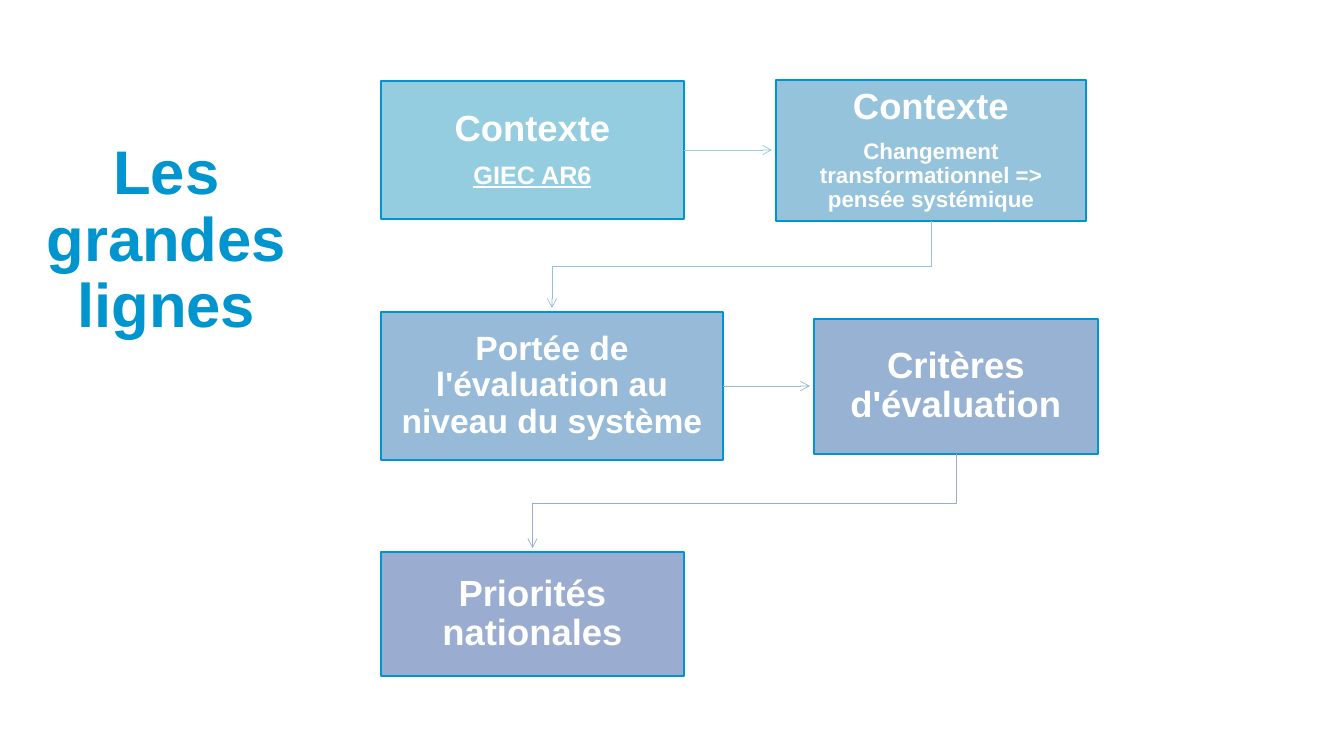
from lxml import etree
from pptx import Presentation
from pptx.dml.color import RGBColor
from pptx.enum.shapes import MSO_CONNECTOR, MSO_SHAPE
from pptx.enum.text import MSO_ANCHOR, PP_ALIGN
from pptx.oxml.ns import qn
from pptx.util import Emu, Pt

RECTANGLE = MSO_SHAPE.RECTANGLE
STRAIGHT = MSO_CONNECTOR.STRAIGHT
CENTER = PP_ALIGN.CENTER
MIDDLE, BOTTOM = MSO_ANCHOR.MIDDLE, MSO_ANCHOR.BOTTOM
RIGHT_SIDE = 3

EMU_PER_PX = 914400 / 100.8
WHITE = "FEFFFE"
BLUE = "0095CE"
ARROW_GAP = 4
STEP_INSET = 18

# Each step: left, top, width, height, fill, [(text, size, underlined)]
STEPS = [
    (381, 81, 303, 138, "93CDDF",
     [("Contexte", 26, False), ("GIEC AR6", 18, True)]),
    (776, 80, 310, 141, "95C3DB",
     [("Contexte", 26, False),
      ("Changement transformationnel => pensée systémique", 16, False)]),
    (381, 312, 342, 148, "96BAD7",
     [("Portée de l'évaluation au niveau du système", 24, False)]),
    (814, 319, 284, 135, "98B2D3",
     [("Critères d'évaluation", 26, False)]),
    (381, 552, 303, 124, "9AACCF",
     [("Priorités nationales", 26, False)]),
]
ARROW_COLORS = ["93CDDF", "95C0DA", "97B5D5", "9AACCF"]


def px(length):
    return Emu(round(length * EMU_PER_PX))


def color(value):
    return RGBColor.from_string(value)


def style_paragraph(paragraph, text, size, text_color, underlined=False):
    paragraph.text = text
    paragraph.alignment = CENTER
    paragraph.line_spacing = 0.9
    font = paragraph.font
    font.name, font.size, font.bold = "Arial", Pt(size), True
    font.color.rgb = color(text_color)
    if underlined:
        font.underline = True


def add_title(slide, text):
    title = slide.shapes.add_textbox(px(0), px(140), px(333), px(206))
    frame = title.text_frame
    frame.word_wrap = True
    frame.vertical_anchor = BOTTOM
    style_paragraph(frame.paragraphs[0], text, 44, BLUE)


def add_step(slide, left, top, width, height, fill, lines):
    step = slide.shapes.add_shape(
        RECTANGLE, px(left), px(top), px(width), px(height))
    step.shadow.inherit = False
    step.fill.solid()
    step.fill.fore_color.rgb = color(fill)
    step.line.color.rgb = color(BLUE)
    step.line.width = Pt(1)

    frame = step.text_frame
    frame.word_wrap = True
    frame.vertical_anchor = MIDDLE
    frame.margin_left = frame.margin_right = px(STEP_INSET)
    frame.margin_top = frame.margin_bottom = px(STEP_INSET)
    for index, (text, size, underlined) in enumerate(lines):
        paragraph = frame.add_paragraph() if index else frame.paragraphs[0]
        style_paragraph(paragraph, text, size, WHITE, underlined)
        if index < len(lines) - 1:
            paragraph.space_after = Pt(9)
    return step


def style_arrow(line, line_color):
    line.color.rgb = color(line_color)
    line.width = Pt(0.5)
    etree.SubElement(line._get_or_add_ln(), qn("a:tailEnd"), type="arrow")


def add_arrow_across(slide, step, following, line_color):
    """Straight arrow from a step to the one on its right."""
    middle = step.top + step.height // 2
    arrow = slide.shapes.add_connector(
        STRAIGHT, step.left + step.width, middle,
        following.left - px(ARROW_GAP), middle)
    arrow.begin_connect(step, RIGHT_SIDE)
    style_arrow(arrow.line, line_color)
    etree.SubElement(arrow._element.spPr, qn("a:effectLst"))


def add_arrow_down(slide, step, following, line_color):
    """Bent arrow from a step to the first one of the next row."""
    start_x = step.left + step.width // 2
    end_x = following.left + following.width // 2
    start_y = step.top + step.height
    bend_y = (start_y + following.top) // 2
    builder = slide.shapes.build_freeform(start_x, start_y)
    builder.add_line_segments(
        [(start_x, bend_y), (end_x, bend_y),
         (end_x, following.top - px(ARROW_GAP))], close=False)
    arrow = builder.convert_to_shape()
    arrow.shadow.inherit = False
    arrow.fill.background()
    style_arrow(arrow.line, line_color)


def main():
    deck = Presentation()
    deck.slide_width, deck.slide_height = px(1344), px(756)
    slide = deck.slides.add_slide(deck.slide_layouts[6])
    slide.background.fill.solid()
    slide.background.fill.fore_color.rgb = color(WHITE)

    add_title(slide, "Les grandes lignes")

    # Steps, two to a row
    steps = [add_step(slide, *step) for step in STEPS]

    # Arrows alternate between across a row and down to the next
    for index, line_color in enumerate(ARROW_COLORS):
        add_arrow = add_arrow_down if index % 2 else add_arrow_across
        add_arrow(slide, steps[index], steps[index + 1], line_color)

    deck.save("out.pptx")


if __name__ == "__main__":
    main()
